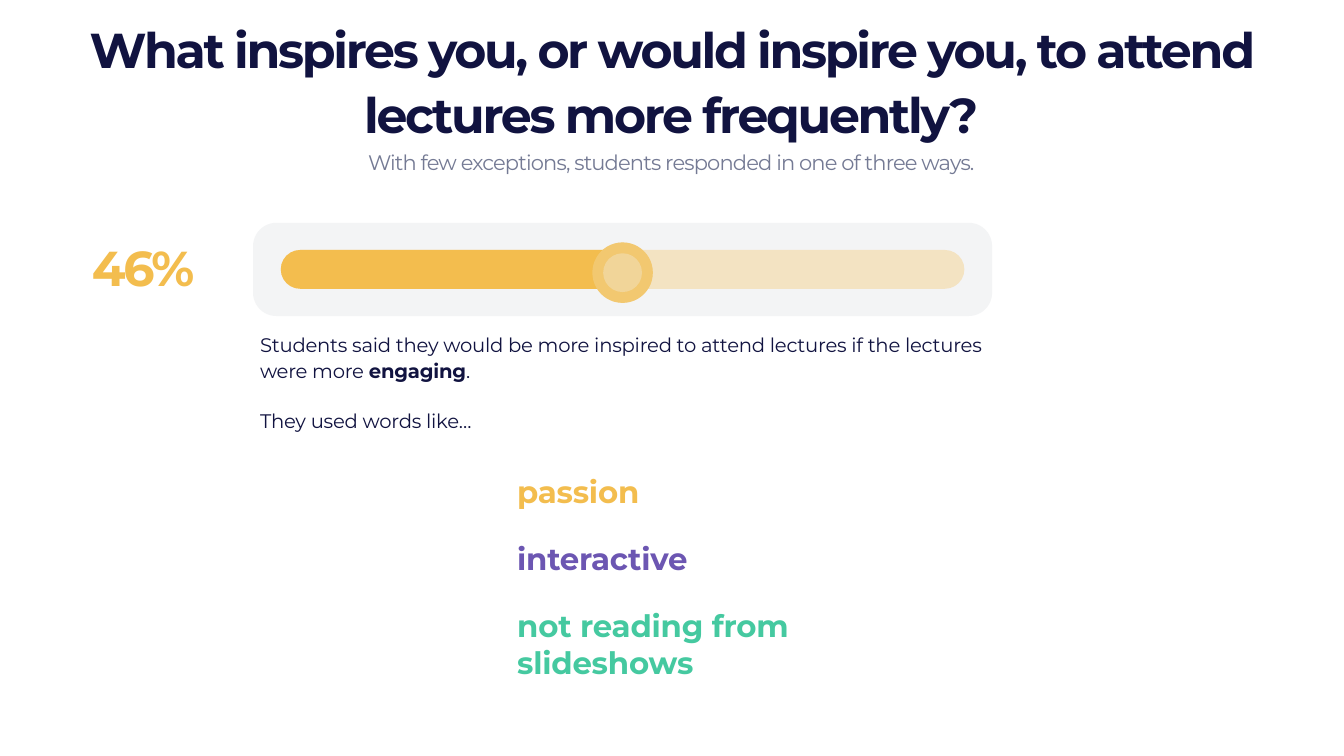
from dataclasses import dataclass

from lxml import etree
from pptx import Presentation
from pptx import util as u
from pptx.dml.color import RGBColor
from pptx.enum import shapes, text
from pptx.oxml.ns import qn

PX = 9144  # EMU per px, 100 px to the inch


@dataclass(frozen=True)
class Theme:
    font: str = "Montserrat"
    navy: str = "111340"
    gray: str = "747A94"
    panel: str = "C3C8CE"
    shine: str = "F1F6F8"
    yellow: str = "F3BD4E"
    purple: str = "6C56B2"
    green: str = "45C9A0"
    display: int = 70
    word: int = 44
    subtitle: int = 30
    body: int = 28
    display_spacing: float = -3.3
    subtitle_spacing: float = -1.2
    body_spacing: float = -0.3


THEME = Theme()
CENTER = text.PP_ALIGN.CENTER
ROUNDED = shapes.MSO_SHAPE.ROUNDED_RECTANGLE
OVAL = shapes.MSO_SHAPE.OVAL


def emu(*lengths):
    return [u.Emu(length * PX) for length in lengths]


def add_filled(parent, kind, box, color, alpha=100, radius=None):
    """Add an unlined shape; alpha is its opacity in percent."""
    sp = parent.add_shape(kind, *emu(*box))
    sp.shadow.inherit = False
    sp.line.fill.background()
    sp.fill.solid()
    sp.fill.fore_color.rgb = RGBColor.from_string(color)
    if alpha < 100:
        clr = sp.fill._xPr.find(f"{qn('a:solidFill')}/{qn('a:srgbClr')}")
        etree.SubElement(clr, qn("a:alpha"), val=str(alpha * 1000))
    if radius is not None:
        sp.adjustments[0] = radius
    return sp


def add_text(parent, box, paragraphs, size, color, spacing, bold=False,
             align=None, anchor=text.MSO_ANCHOR.TOP, leading=None, gap=0):
    """Add a text box; each paragraph is a list of (wording, bold) runs."""
    tf = parent.add_textbox(*emu(*box)).text_frame
    tf.word_wrap = True
    tf.vertical_anchor = anchor
    for i, runs in enumerate(paragraphs):
        p = tf.add_paragraph() if i else tf.paragraphs[0]
        p.alignment = align
        p.font.name = THEME.font
        p.font.size = u.Pt(size)
        p.font.bold = bold
        p.font.color.rgb = RGBColor.from_string(color)
        if leading:
            p.line_spacing = u.Pt(leading)
        if i:
            p.space_before = u.Pt(gap)
        for wording, strong in runs:
            r = p.add_run()
            r.text = wording
            if strong:
                r.font.bold = True
            r._r.get_or_add_rPr().set("spc", str(round(spacing * 100)))


def add_heading(parent, x, y, w):
    title = "What inspires you, or would inspire you, to attend lectures more frequently?"
    subtitle = "With few exceptions, students responded in one of three ways."
    add_text(parent, (x, y, w, 265), [[(title, False)]], THEME.display,
             THEME.navy, THEME.display_spacing, bold=True, align=CENTER,
             anchor=text.MSO_ANCHOR.BOTTOM, leading=94)
    add_text(parent, (x, y + 267, w, 61), [[(subtitle, False)]],
             THEME.subtitle, THEME.gray, THEME.subtitle_spacing, align=CENTER)


def add_knob(parent, cx, cy):
    group = parent.add_group_shape().shapes
    for size, color, alpha in ((120, THEME.yellow, 100),
                               (120, THEME.shine, 20),
                               (77, THEME.shine, 30)):
        box = (cx - size / 2, cy - size / 2, size, size)
        add_filled(group, OVAL, box, color, alpha)


def add_slider(parent, x, y, w, h):
    pad, bar_h, filled_w = 55, 77, 683
    bar_x, bar_y = x + pad, y + (h - bar_h) // 2
    add_filled(parent, ROUNDED, (x, y, w, h), THEME.panel, 20, 0.25)
    add_filled(parent, ROUNDED, (bar_x, bar_y, w - 2 * pad, bar_h),
               THEME.yellow, 30, 0.5)
    add_filled(parent, ROUNDED, (bar_x, bar_y, filled_w, bar_h),
               THEME.yellow, radius=0.5)
    add_knob(parent, bar_x + filled_w - 5, y + 99)


def add_percentage(parent, x, y, w, h):
    add_text(parent, (x, y, w, h), [[("46%", False)]], THEME.display,
             THEME.yellow, THEME.display_spacing, bold=True, align=CENTER,
             anchor=text.MSO_ANCHOR.MIDDLE)


def add_finding(parent, x, y, w, h):
    finding = [
        [("Students said they would be more inspired to attend lectures "
          "if the lectures were more ", False), ("engaging", True), (".", False)],
        [("They used words like…", False)],
    ]
    add_text(parent, (x, y, w, h), finding, THEME.body, THEME.navy,
             THEME.body_spacing, leading=36, gap=36)


def add_words(parent, x, y, step):
    words = (("passion", THEME.yellow, 337, 84),
             ("interactive", THEME.purple, 392, 84),
             ("not reading from slideshows", THEME.green, 605, 158))
    for i, (word, color, w, h) in enumerate(words):
        add_text(parent, (x, y + i * step, w, h), [[(word, False)]],
                 THEME.word, color, THEME.body_spacing, bold=True)


def main():
    prs = Presentation()
    prs.slide_width, prs.slide_height = emu(2666, 1500)
    parent = prs.slides.add_slide(prs.slide_layouts[6]).shapes
    add_slider(parent, 502, 442, 1466, 185)
    add_heading(parent, 165, 25, 2333)
    add_finding(parent, 506, 653, 1466, 209)
    add_percentage(parent, 159, 465, 250, 128)
    add_words(parent, 1016, 933, 133)
    prs.save("out.pptx")


if __name__ == "__main__":
    main()
